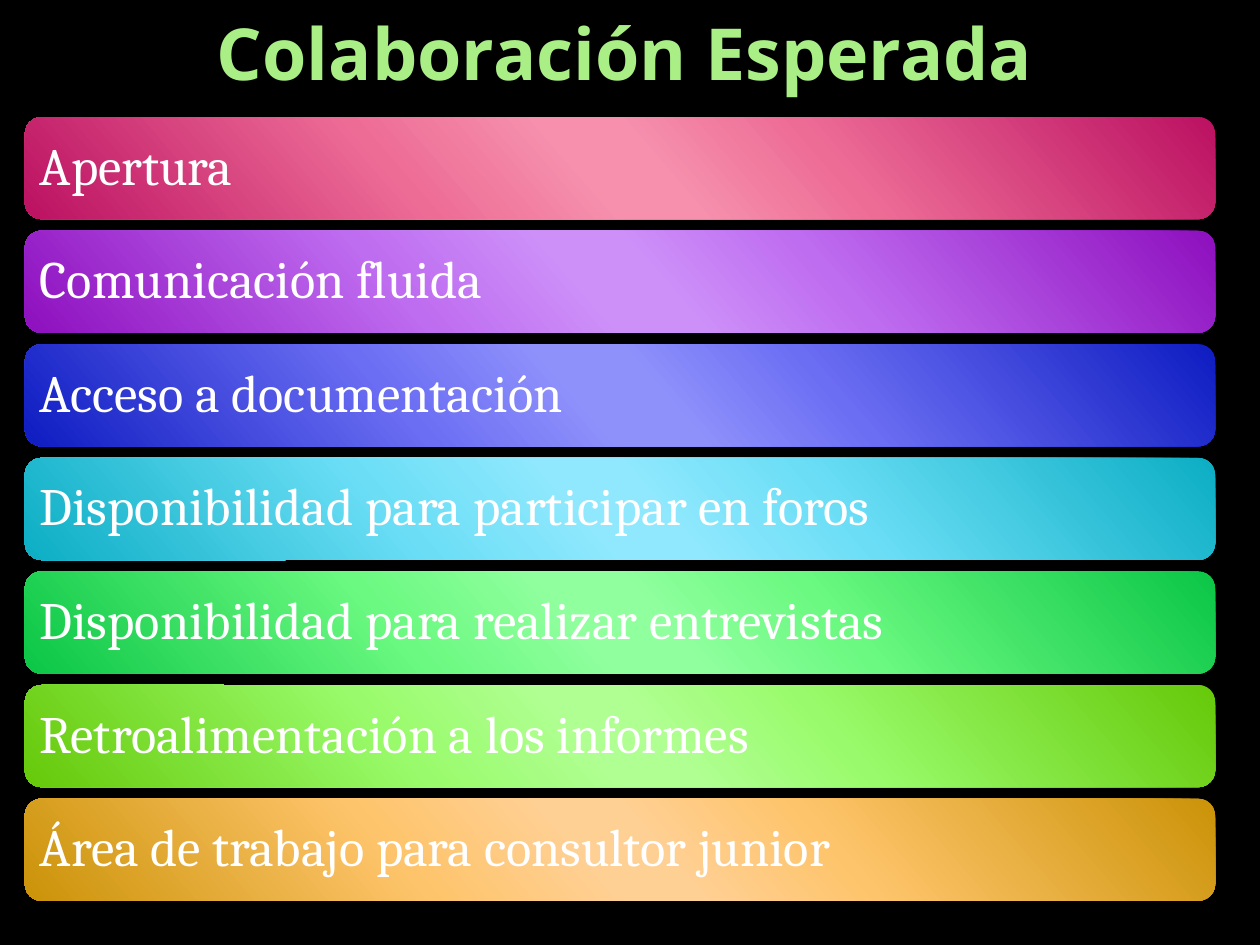
import pptx
import pptx.dml.color
import pptx.enum.dml
import pptx.enum.shapes
import pptx.enum.text
import pptx.oxml
import pptx.oxml.ns
import pptx.util

Cm = pptx.util.Cm
STOPS = (0, 33, 47, 53, 68, 100)
BARS = [
    ("Apertura", "BB1162", "ED6C96", "F690AD"),
    ("Comunicación fluida", "8E0FBE", "BE6CF0", "CD90F8"),
    ("Acceso a documentación", "0E1CC1", "6B6EF3", "8F91FB"),
    ("Disponibilidad para participar en foros", "0CAEC4", "6BDEF6", "8FE8FD"),
    ("Disponibilidad para realizar entrevistas", "0BC646", "6BF981", "90FF9E"),
    ("Retroalimentación a los informes", "66C909", "99FB6B", "B0FF92"),
    ("Área de trabajo para consultor junior", "CB9308", "FEC46B", "FFD094"),
]


def color(code):
    """Return the colour for a hex string."""
    return pptx.dml.color.RGBColor.from_string(code)


def style(par, font, size, code, bold, align):
    """Set the font and alignment of a paragraph."""
    par.font.name = font
    par.font.size = pptx.util.Pt(size)
    par.font.color.rgb = color(code)
    par.font.bold = bold
    par.alignment = align


def shade(shape, edge, mid, core):
    """Fill a shape with a slanted gradient, brightest in the middle."""
    codes = (edge, mid, core, core, mid, edge)
    stops = "".join(
        f'<a:gs pos="{pos * 1000}"><a:srgbClr val="{color(code)}"/></a:gs>'
        for pos, code in zip(STOPS, codes)
    )
    shape.fill.gradient()
    old = shape.element.spPr.find(pptx.oxml.ns.qn("a:gradFill"))
    new = pptx.oxml.parse_xml(
        f'<a:gradFill {pptx.oxml.ns.nsdecls("a")} rotWithShape="1">'
        f'<a:gsLst>{stops}</a:gsLst><a:lin ang="{139 * 60000}" scaled="0"/></a:gradFill>'
    )
    old.getparent().replace(old, new)


def add_title(slide, text, left, top, width, height):
    """Place the slide title in the given box."""
    title = slide.shapes.title
    title.left, title.top, title.width, title.height = left, top, width, height
    frame = title.text_frame
    frame.text = text
    frame.auto_size = pptx.enum.text.MSO_AUTO_SIZE.NONE
    frame.vertical_anchor = pptx.enum.text.MSO_ANCHOR.MIDDLE
    style(frame.paragraphs[0], "Noto Sans", 41, "A9EF86", True, pptx.enum.text.PP_ALIGN.CENTER)


def add_bar(slide, text, hues, left, top, width, height):
    """Draw one rounded bar with its label."""
    bar = slide.shapes.add_shape(
        pptx.enum.shapes.MSO_SHAPE.ROUNDED_RECTANGLE, left, top, width, height
    )
    bar.shadow.inherit = False
    bar.line.fill.background()
    shade(bar, *hues)
    frame = bar.text_frame
    frame.text = text
    frame.word_wrap = True
    frame.vertical_anchor = pptx.enum.text.MSO_ANCHOR.MIDDLE
    frame.margin_left = frame.margin_right = Cm(0.2)
    frame.margin_top = frame.margin_bottom = Cm(0.2)
    par = frame.paragraphs[0]
    par.line_spacing = 0.9
    style(par, "Cambria", 30, "FFFFFF", False, pptx.enum.text.PP_ALIGN.LEFT)


def add_list(slide, bars, left, top, width, height, gap):
    """Stack the bars evenly in the given box."""
    tall = (height - gap * (len(bars) - 1)) / len(bars)
    for row, (text, *hues) in enumerate(bars):
        add_bar(slide, text, hues, left, round(top + row * (tall + gap)), width, round(tall))


def main():
    """Build and save the slide."""
    deck = pptx.Presentation()
    deck.slide_width, deck.slide_height = Cm(25.4), Cm(19.05)
    slide = deck.slides.add_slide(deck.slide_layouts[5])
    back = slide.background.fill
    back.solid()
    back.fore_color.rgb = color("000000")
    add_list(slide, BARS, Cm(0.5), Cm(2.36), Cm(24), Cm(15.8), Cm(0.23))
    add_title(slide, "Colaboración Esperada", Cm(1.27), Cm(0), Cm(22.66), Cm(2.08))
    deck.save("out.pptx")


if __name__ == "__main__":
    main()
